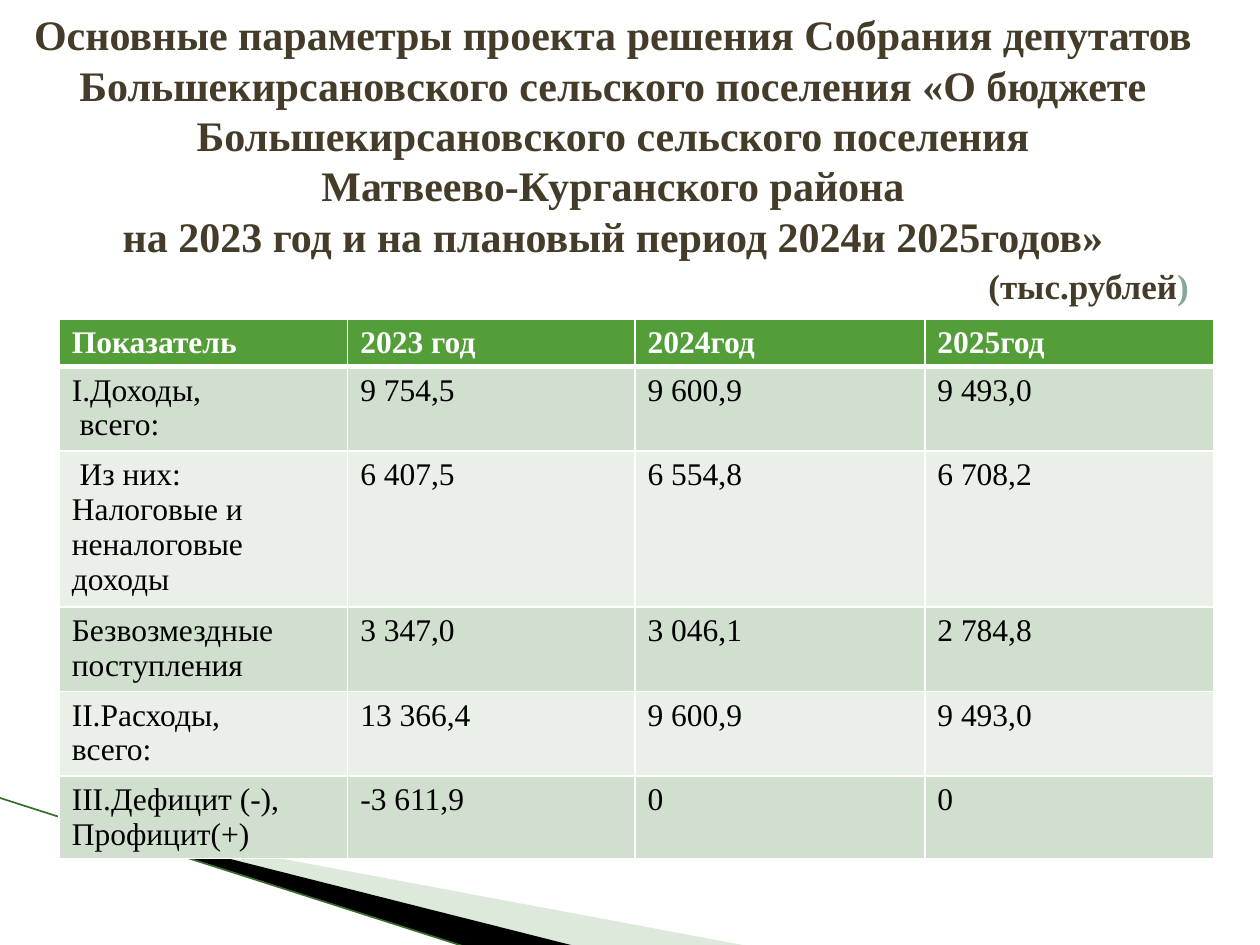
from lxml.etree import SubElement
from pptx import Presentation
from pptx.dml.color import RGBColor
from pptx.enum.text import PP_ALIGN
from pptx.oxml import parse_xml
from pptx.oxml.ns import nsdecls, qn
from pptx.util import Inches, Pt

FONT = "Times New Roman"
COLORS = {
    "title": "443C29", "bracket": "87A896", "header": "549E39",
    "odd": "D1DFCE", "even": "E9F0E8", "white": "FFFFFF", "black": "000000",
    "wedge": "AACAA3", "line": "3A6B2E",
}
TITLE = [
    "Основные параметры проекта решения Собрания депутатов "
    "Большекирсановского сельского поселения «О бюджете "
    "Большекирсановского сельского поселения",
    "Матвеево-Курганского района",
    "на 2023 год и на плановый период 2024и 2025годов»",
]
UNIT = [("(тыс.рублей", "title"), (")", "bracket")]
ROWS = [
    ("Показатель", "2023 год", "2024год", "2025год"),
    ("I.Доходы,\n всего:", "9 754,5", "9 600,9", "9 493,0"),
    (" Из них:\nНалоговые и неналоговые доходы", "6 407,5", "6 554,8", "6 708,2"),
    ("Безвозмездные поступления", "3 347,0", "3 046,1", "2 784,8"),
    ("II.Расходы,\nвсего:", "13 366,4", "9 600,9", "9 493,0"),
    ("III.Дефицит (-),\nПрофицит(+)", "-3 611,9", "0", "0"),
]
COLUMN_WIDTHS = [2.29, 2.28, 2.3, 2.29]
ROW_HEIGHTS = [0.38, 0.67, 1.24, 0.67, 0.67, 0.65]
# Outline, colour, opacity in percent
WEDGES = [
    ([(0.55, 6.5), (5.95, 7.51), (4.56, 7.51)], "wedge", 40),
    ([(0.53, 6.49), (4.57, 7.51), (3.72, 7.52), (0.54, 6.5)], "black", 100),
]


def color(name):
    return RGBColor.from_string(COLORS[name])


def style(paragraph, size, color_name, bold):
    for run in paragraph.runs:
        run.font.name = FONT
        run.font.size = Pt(size)
        run.font.bold = bold
        run.font.color.rgb = color(color_name)


def add_wedge(slide, points, color_name, opacity):
    start, *rest = [(Inches(x), Inches(y)) for x, y in points]
    builder = slide.shapes.build_freeform(*start)
    builder.add_line_segments(rest, close=True)
    shape = builder.convert_to_shape()
    shape.shadow.inherit = False
    shape.line.fill.background()
    shape.fill.solid()
    shape.fill.fore_color.rgb = color(color_name)
    if opacity < 100:
        fill = shape.fill._xPr.find(qn("a:solidFill"))
        SubElement(fill[0], qn("a:alpha"), val=str(opacity * 1000))


def set_borders(cell, bottom_width):
    properties = cell._tc.get_or_add_tcPr()
    widths = {"lnL": 1, "lnR": 1, "lnT": 1, "lnB": bottom_width}
    for position, (tag, width) in enumerate(widths.items()):
        properties.insert(position, parse_xml(
            f'<a:{tag} {nsdecls("a")} w="{Pt(width)}"><a:solidFill>'
            f'<a:srgbClr val="{COLORS["white"]}"/></a:solidFill></a:{tag}>'))


def add_table(slide):
    table = slide.shapes.add_table(
        len(ROWS), len(COLUMN_WIDTHS), Inches(0.47), Inches(2.53),
        Inches(sum(COLUMN_WIDTHS)), Inches(sum(ROW_HEIGHTS))).table
    for column, width in zip(table.columns, COLUMN_WIDTHS):
        column.width = Inches(width)
    for index, (row, height, texts) in enumerate(zip(table.rows, ROW_HEIGHTS, ROWS)):
        row.height = Inches(height)
        header = index == 0
        fill_name = "header" if header else "odd" if index % 2 else "even"
        for cell, text in zip(row.cells, texts):
            cell.text_frame.text = text
            cell.fill.solid()
            cell.fill.fore_color.rgb = color(fill_name)
            # The header and the first body row share the thick rule
            set_borders(cell, 3 if header else 1)
            for paragraph in cell.text_frame.paragraphs:
                style(paragraph, 18, "white" if header else "black", header)


def add_title(slide):
    box = slide.shapes.add_textbox(0, Inches(0.02), Inches(9.73), Inches(2.46))
    frame = box.text_frame
    frame.word_wrap = True
    frame.text = "\n".join(TITLE)
    for paragraph in frame.paragraphs:
        paragraph.alignment = PP_ALIGN.CENTER
        paragraph.line_spacing = Pt(28.8)
        style(paragraph, 24, "title", True)
    # Unit label, centred in the indented right-hand part
    unit = frame.add_paragraph()
    unit.alignment = PP_ALIGN.CENTER
    unit.line_spacing = Pt(26)
    unit._p.get_or_add_pPr().set("marL", str(Inches(7.55)))
    for text, _ in UNIT:
        unit.add_run().text = text
    style(unit, 20, "title", True)
    for run, (_, color_name) in zip(unit.runs, UNIT):
        run.font.color.rgb = color(color_name)


def main():
    presentation = Presentation()
    presentation.slide_width, presentation.slide_height = Inches(10), Inches(7.5)
    slide = presentation.slides.add_slide(presentation.slide_layouts[6])

    # Corner decoration
    for wedge in WEDGES:
        add_wedge(slide, *wedge)
    line = slide.shapes.add_connector(
        1, Inches(-0.01), Inches(6.33), Inches(3.71), Inches(7.52))
    line.line.color.rgb = color("line")
    line.line.width = Pt(0.95)
    SubElement(line._element.spPr, qn("a:effectLst"))

    add_table(slide)
    add_title(slide)
    presentation.save("out.pptx")


if __name__ == "__main__":
    main()
